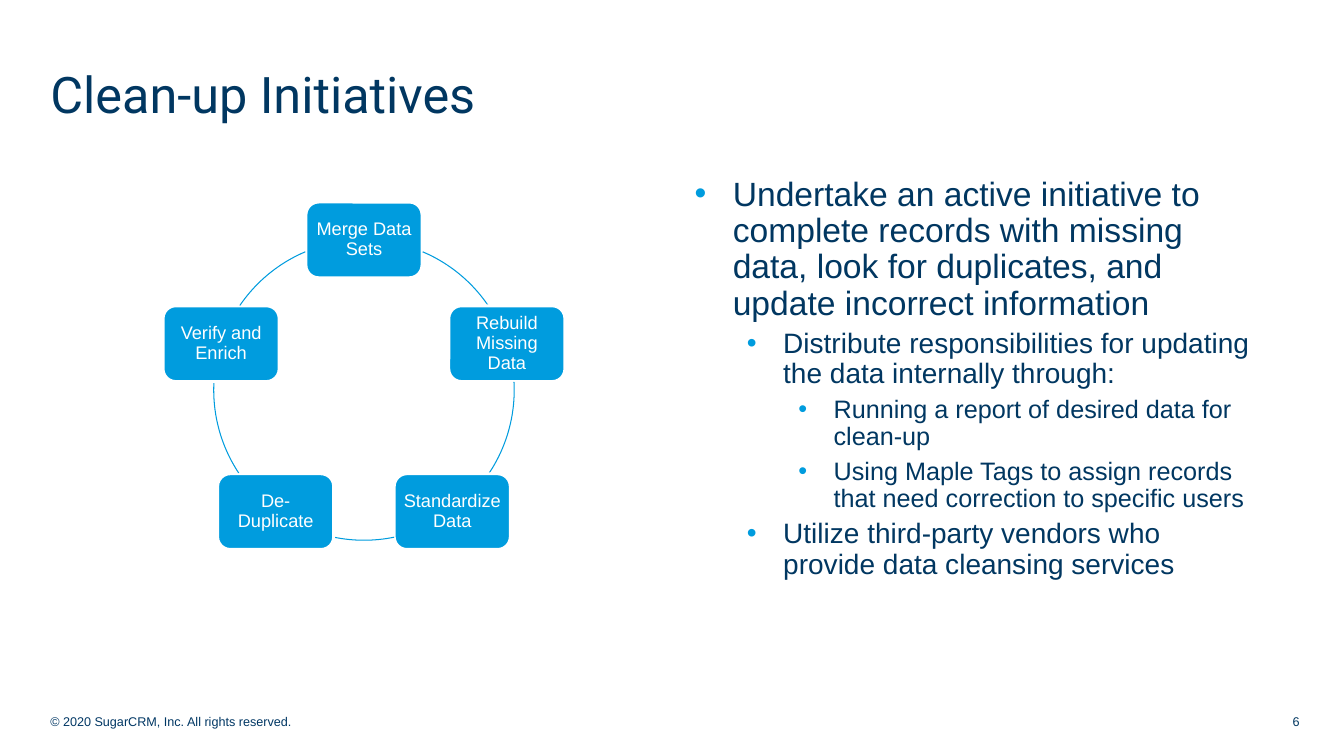
from math import cos, radians, sin

from lxml.etree import SubElement
from pptx import Presentation
from pptx.dml.color import RGBColor
from pptx.enum.shapes import MSO_SHAPE
from pptx.enum.text import MSO_ANCHOR, MSO_AUTO_SIZE, PP_ALIGN
from pptx.oxml.ns import qn
from pptx.util import Inches, Pt

NAVY = RGBColor(0x01, 0x37, 0x61)
FOOTER_BLUE = RGBColor(0x00, 0x37, 0x64)
CYAN = RGBColor(0x00, 0x9C, 0xDE)
WHITE = RGBColor(0xFF, 0xFF, 0xFF)

STEPS = ["Merge Data Sets", "Rebuild Missing Data", "Standardize Data",
         "De-Duplicate", "Verify and Enrich"]
# Start and end angle of each arc, clockwise from the right
ARCS = [(293, 325.7), (356.9, 33.5), (78.4, 101.6), (146.5, 183.1), (214.3, 247)]

# Left margin, hanging indent, text size and space before of each level
LEVELS = [(0.5, -0.38, 24, 10), (1, -0.36, 20, 5), (1.5, -0.35, 18, 5)]
BULLETS = [
    (0, "Undertake an active initiative to complete records with missing data, "
        "look for duplicates, and update incorrect information"),
    (1, "Distribute responsibilities for updating the data internally through:"),
    (2, "Running a report of desired data for clean-up"),
    (2, "Using Maple Tags to assign records that need correction to specific users"),
    (1, "Utilize third-party vendors who provide data cleansing services"),
]


def set_attrs(obj, values):
    for name, value in values.items():
        setattr(obj, name, value)


def add_run(p, text, size, color, font="Arial"):
    r = p.add_run()
    r.text = text
    set_attrs(r.font, {"size": Pt(size), "name": font})
    r.font.color.rgb = color


def add_title(slide, text, x, y, w, h):
    sp = slide.shapes.title
    set_attrs(sp, {"left": Inches(x), "top": Inches(y),
                   "width": Inches(w), "height": Inches(h)})
    tf = sp.text_frame
    set_attrs(tf, {"auto_size": MSO_AUTO_SIZE.NONE,
                   "vertical_anchor": MSO_ANCHOR.MIDDLE})
    p = tf.paragraphs[0]
    p.alignment = PP_ALIGN.LEFT
    add_run(p, text, 36, NAVY, "Roboto")


def add_cycle(slide, x, y, diameter, box_w=1.15, box_h=0.75):
    radius = diameter / 2
    cx, cy = x + radius, y + radius
    for i, (step, (start, end)) in enumerate(zip(STEPS, ARCS)):
        # Step box, centred on the circle
        angle = radians(-90 + i * 360 / len(STEPS))
        left = cx + radius * cos(angle) - box_w / 2
        top = cy + radius * sin(angle) - box_h / 2
        sp = slide.shapes.add_shape(MSO_SHAPE.ROUNDED_RECTANGLE, Inches(left),
                                    Inches(top), Inches(box_w), Inches(box_h))
        sp.shadow.inherit = False
        sp.fill.solid()
        sp.fill.fore_color.rgb = CYAN
        sp.line.color.rgb = WHITE
        sp.line.width = Pt(2)
        tf = sp.text_frame
        set_attrs(tf, {"word_wrap": True, "vertical_anchor": MSO_ANCHOR.MIDDLE})
        for side in ("left", "top", "right", "bottom"):
            setattr(tf, f"margin_{side}", Inches(0.05))
        p = tf.paragraphs[0]
        set_attrs(p, {"alignment": PP_ALIGN.CENTER, "line_spacing": 0.9})
        add_run(p, step, 13, WHITE)

        # Arc to the next step
        arc = slide.shapes.add_shape(MSO_SHAPE.ARC, Inches(x), Inches(y),
                                     Inches(diameter), Inches(diameter))
        arc.shadow.inherit = False
        arc.fill.background()
        arc.line.color.rgb = CYAN
        arc.line.width = Pt(0.75)
        for k, degrees in enumerate((start, end)):
            arc.adjustments[k] = degrees * 0.6  # 60000 units a degree


def add_bullet(p, margin, indent):
    pPr = p._p.get_or_add_pPr()
    pPr.set("marL", str(Inches(margin)))
    pPr.set("indent", str(Inches(indent)))
    color = SubElement(pPr, qn("a:buClr"))
    SubElement(color, qn("a:srgbClr"), val=str(CYAN))
    SubElement(pPr, qn("a:buFont"), typeface="Arial")
    SubElement(pPr, qn("a:buChar"), char="•")


def add_bullets(slide, x, y, w, h):
    tf = slide.shapes.add_textbox(Inches(x), Inches(y), Inches(w), Inches(h)).text_frame
    tf.word_wrap = True
    for i, (level, text) in enumerate(BULLETS):
        margin, indent, size, before = LEVELS[level]
        p = tf.add_paragraph() if i else tf.paragraphs[0]
        add_bullet(p, margin, indent)
        set_attrs(p, {"level": level, "line_spacing": 0.9,
                      "space_before": Pt(before if i else 0)})
        add_run(p, text, size, NAVY)


def add_footer(slide, text, x, y, w, h, color, align):
    tf = slide.shapes.add_textbox(Inches(x), Inches(y), Inches(w), Inches(h)).text_frame
    set_attrs(tf, {"word_wrap": True, "vertical_anchor": MSO_ANCHOR.MIDDLE})
    p = tf.paragraphs[0]
    p.alignment = align
    add_run(p, text, 9, color)


def main():
    prs = Presentation()
    set_attrs(prs, {"slide_width": Inches(13.33), "slide_height": Inches(7.5)})
    slide = prs.slides.add_slide(prs.slide_layouts[5])
    add_title(slide, "Clean-up Initiatives", 0.4, 0.26, 12.54, 1.34)
    add_cycle(slide, 2.12, 2.38, 2.98)
    add_bullets(slide, 6.67, 1.71, 5.86, 4.96)
    add_footer(slide, "© 2020 SugarCRM, Inc. All rights reserved.",
               0.4, 6.96, 2.98, 0.4, FOOTER_BLUE, PP_ALIGN.LEFT)
    add_footer(slide, "6", 12.61, 6.96, 0.49, 0.4, NAVY, PP_ALIGN.CENTER)
    prs.save("out.pptx")


if __name__ == "__main__":
    main()
